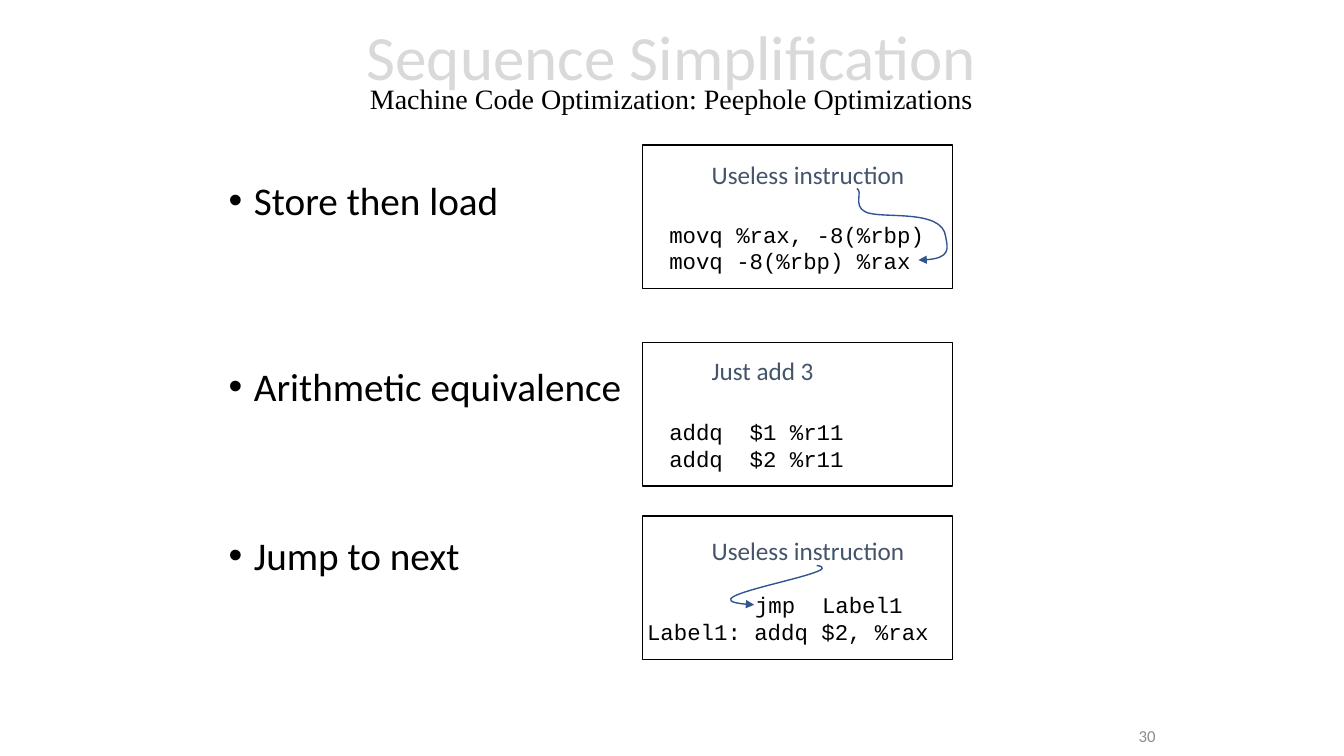
from lxml import etree
from pptx import Presentation
from pptx.dml.color import RGBColor
from pptx.enum.shapes import MSO_SHAPE
from pptx.enum.text import MSO_ANCHOR, MSO_AUTO_SIZE, PP_ALIGN
from pptx.oxml.ns import qn
from pptx.util import Inches, Pt

RECTANGLE = MSO_SHAPE.RECTANGLE
TOP, MIDDLE = MSO_ANCHOR.TOP, MSO_ANCHOR.MIDDLE
LEFT, CENTER, RIGHT = PP_ALIGN.LEFT, PP_ALIGN.CENTER, PP_ALIGN.RIGHT
NO_AUTOFIT = MSO_AUTO_SIZE.NONE

COLORS = {"title": "D9D9D9", "text": "000000", "note": "44546A",
          "arrow": "325491", "number": "8C8C8C", "box": "FFFFFF"}
BODY, CODE, SERIF = "Calibri", "Courier New", "Times New Roman"
TITLE_ONLY_LAYOUT = 5

BOX_LEFT, BOX_WIDTH, BOX_HEIGHT = 6.37, 3.08, 1.42
CODE_OFFSET = 0.7
LABEL_INDENT = 1.07  # eight code characters

# (bullet, space before in points)
BULLETS = [("Store then load", 10), ("Arithmetic equivalence", 102.5),
           ("Jump to next", 90.5)]

# Each example: box top, note and its top, code left, code lines with indents,
# and the arrow as a start point followed by cubic control points
EXAMPLES = [
    (1.44, "Useless instruction", 1.53, 6.54,
     [("movq %rax, -8(%rbp)", 0), ("movq -8(%rbp) %rax", 0)],
     [(8.5, 1.87), (8.56, 1.9), (8.46, 2.04), (8.58, 2.1),
      (8.72, 2.18), (9.35, 2.06), (9.38, 2.35),
      (9.4, 2.46), (9.44, 2.58), (9.11, 2.58)]),
    (3.4, "Just add 3", 3.48, 6.54,
     [("addq  $1 %r11", 0), ("addq  $2 %r11", 0)], None),
    (5.12, "Useless instruction", 5.26, 6.32,
     [("jmp  Label1", LABEL_INDENT), ("Label1: addq $2, %rax", 0)],
     [(8.1, 5.61), (8.49, 5.67), (6.6, 5.95), (7.48, 6)]),
]


class SlideBuilder:
    def __init__(self, slide):
        self.slide = slide

    def format_run(self, run, size, color, font=BODY):
        run.font.size = Pt(size)
        run.font.name = font
        run.font.color.rgb = RGBColor.from_string(COLORS[color])

    def title(self, left, top, width, height, heading, subtitle):
        shape = self.slide.shapes.title
        shape.left, shape.top = Inches(left), Inches(top)
        shape.width, shape.height = Inches(width), Inches(height)
        frame = shape.text_frame
        frame.auto_size = NO_AUTOFIT
        frame.vertical_anchor = MIDDLE
        paragraph = frame.paragraphs[0]
        paragraph.text = f"{heading}\v{subtitle}"
        paragraph.alignment = CENTER
        paragraph.line_spacing = 0.7
        heading_run, subtitle_run = paragraph.runs
        self.format_run(heading_run, 45, "title")
        self.format_run(subtitle_run, 20, "text", SERIF)

    def text(self, left, top, width, height, lines, size, color,
             font=BODY, align=LEFT, anchor=TOP):
        shape = self.slide.shapes.add_textbox(
            Inches(left), Inches(top), Inches(width), Inches(height))
        frame = shape.text_frame
        frame.word_wrap = True
        frame.vertical_anchor = anchor
        frame.text = "\n".join(lines)
        for paragraph in frame.paragraphs:
            paragraph.alignment = align
            self.format_run(paragraph.runs[0], size, color, font)
        return frame

    def bullets(self, left, top, width, height, items):
        frame = self.text(left, top, width, height,
                          [item for item, _ in items], 28, "text")
        for paragraph, (_, space) in zip(frame.paragraphs, items):
            paragraph.line_spacing = 0.9
            paragraph.space_before = Pt(space)
            properties = paragraph._p.get_or_add_pPr()
            properties.set("marL", str(Inches(0.25)))
            properties.set("indent", str(Inches(-0.25)))
            etree.SubElement(properties, qn("a:buFont"), typeface="Arial")
            etree.SubElement(properties, qn("a:buChar"), char="•")

    def code(self, left, top, width, height, lines):
        frame = self.text(left, top, width, height,
                          [line for line, _ in lines], 16, "text", CODE)
        frame.margin_right = 0
        for paragraph, (_, indent) in zip(frame.paragraphs, lines):
            if indent:
                properties = paragraph._p.get_or_add_pPr()
                properties.set("marL", str(Inches(indent)))

    def box(self, left, top, width, height):
        shape = self.slide.shapes.add_shape(
            RECTANGLE, Inches(left), Inches(top), Inches(width), Inches(height))
        shape.shadow.inherit = False
        shape.fill.solid()
        shape.fill.fore_color.rgb = RGBColor.from_string(COLORS["box"])
        self.outline(shape, "text")

    def outline(self, shape, color):
        shape.line.width = Pt(1)
        shape.line.color.rgb = RGBColor.from_string(COLORS[color])

    def curved_arrow(self, points):
        start, *controls = [(Inches(x), Inches(y)) for x, y in points]
        builder = self.slide.shapes.build_freeform(*start)
        builder.add_line_segments(controls, close=False)
        shape = builder.convert_to_shape()
        shape.shadow.inherit = False
        shape.fill.background()
        self.outline(shape, "arrow")
        # Turn every three line segments into one cubic curve
        outline_path = next(shape.element.iter(qn("a:path")))
        segments = outline_path.findall(qn("a:lnTo"))
        for first in range(0, len(segments), 3):
            curve = etree.SubElement(outline_path, qn("a:cubicBezTo"))
            for segment in segments[first:first + 3]:
                curve.append(segment[0])
                outline_path.remove(segment)
        line = next(shape.element.iter(qn("a:ln")))
        etree.SubElement(line, qn("a:tailEnd"), type="triangle")


def main():
    presentation = Presentation()
    presentation.slide_width = Inches(13.33)
    presentation.slide_height = Inches(7.5)
    layout = presentation.slide_layouts[TITLE_ONLY_LAYOUT]
    builder = SlideBuilder(presentation.slides.add_slide(layout))

    # Title, topics and slide number
    builder.title(2.35, 0.03, 8.62, 1.45, "Sequence Simplification",
                  "Machine Code Optimization: Peephole Optimizations")
    builder.bullets(2.17, 1.75, 4.42, 4.95, BULLETS)
    builder.text(9.31, 7.1, 2.25, 0.4, ["30"], 12, "number",
                 align=RIGHT, anchor=MIDDLE)

    # Code examples
    for top, note, note_top, code_left, lines, arrow in EXAMPLES:
        builder.box(BOX_LEFT, top, BOX_WIDTH, BOX_HEIGHT)
        builder.code(code_left, top + CODE_OFFSET, 3.04, 0.64, lines)
        if arrow:
            builder.curved_arrow(arrow)
        builder.text(6.96, note_top, 2.23, 0.4, [note], 18, "note")

    presentation.save("out.pptx")


if __name__ == "__main__":
    main()
